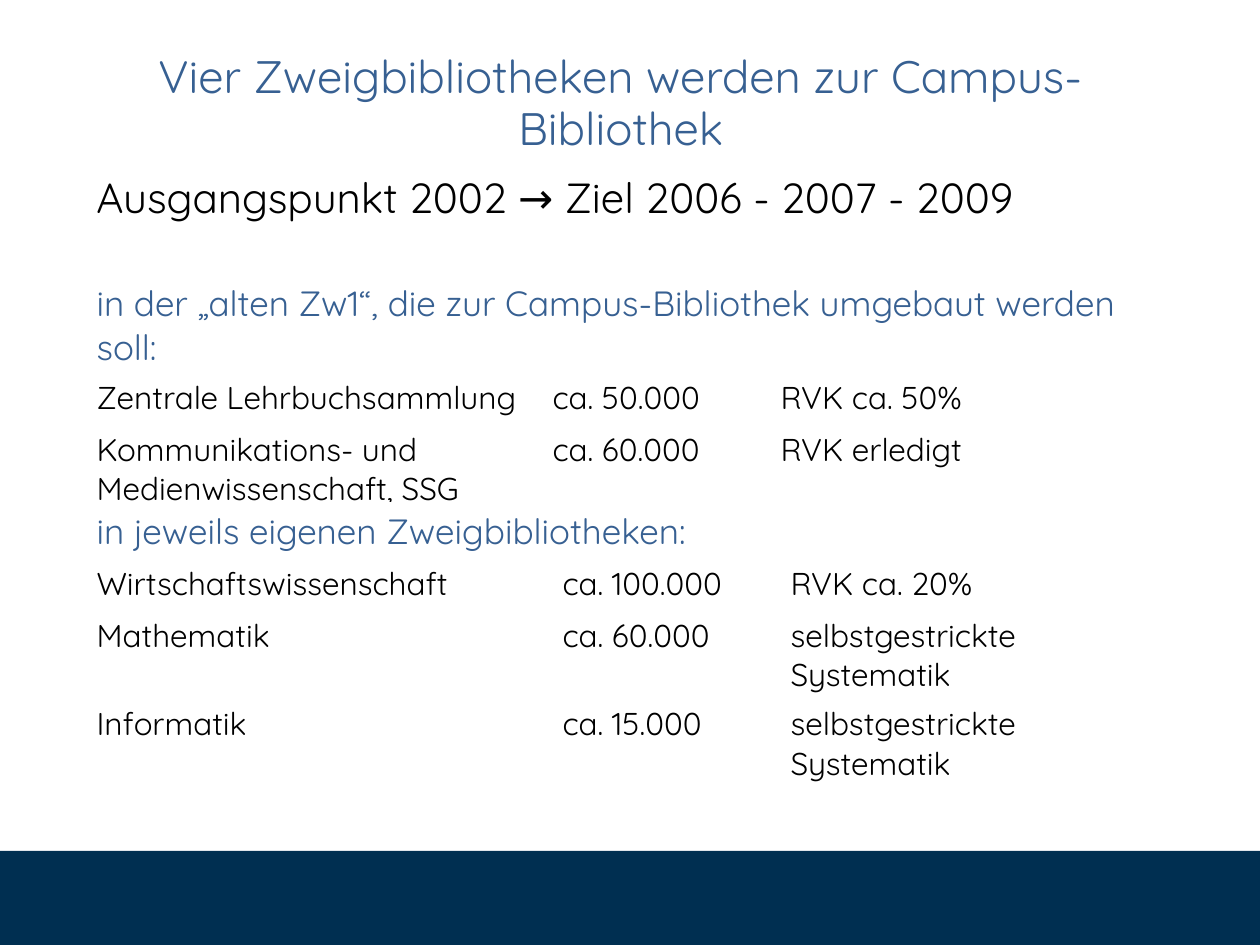
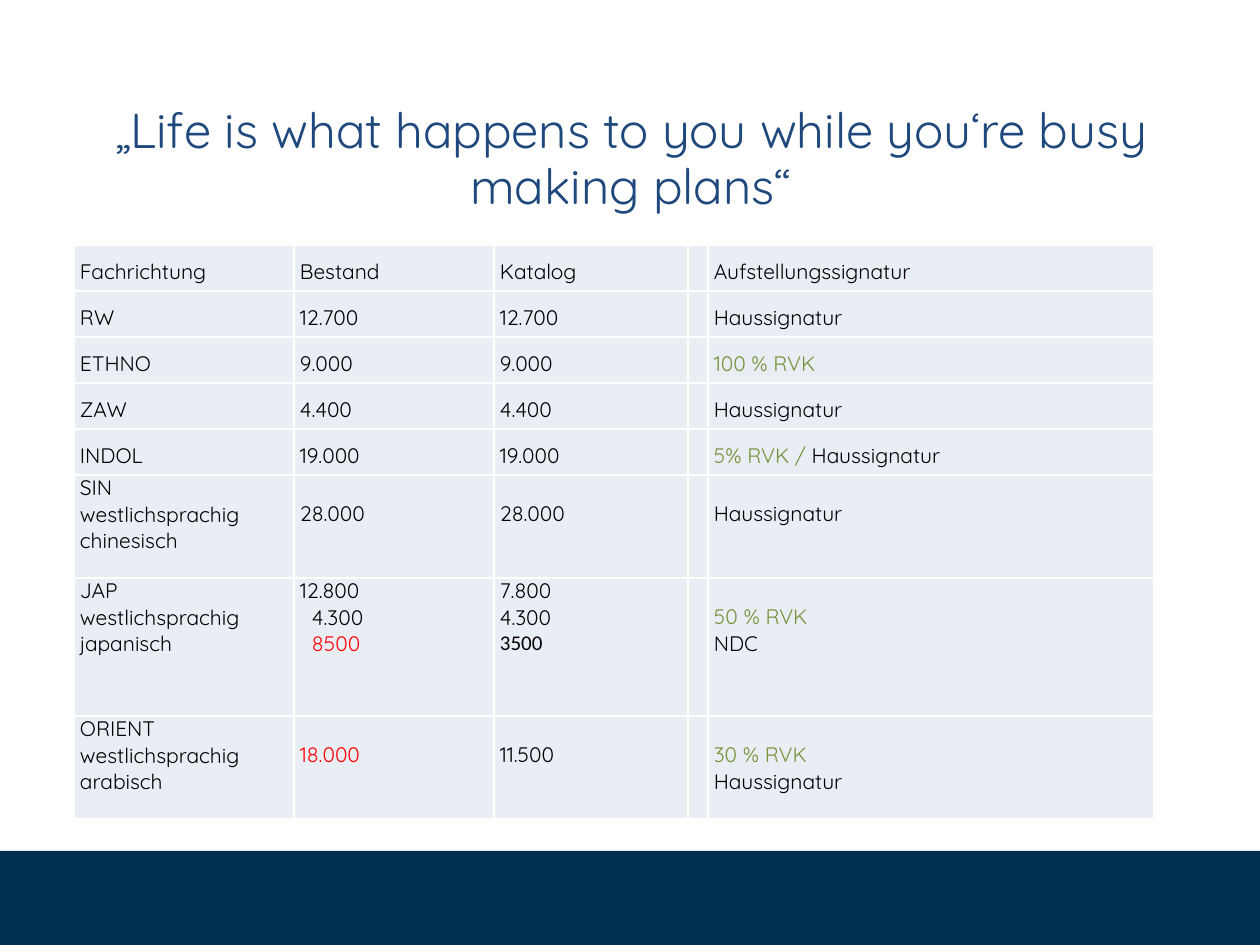
"""Builds two slides on library branches merging into a campus library."""
from dataclasses import dataclass

from lxml.etree import SubElement
from pptx import Presentation
from pptx.dml.color import RGBColor as RGB
from pptx.enum.shapes import MSO_SHAPE as SHAPE
from pptx.enum.text import MSO_ANCHOR as ANCHOR, PP_ALIGN as ALIGN
from pptx.oxml.ns import qn
from pptx.util import Pt

PX = 914400 // 126


@dataclass(frozen=True)
class Theme:
    font: str = "Quicksand"
    digits: str = "Calibri"
    band: str = "002F51"
    heading: str = "376092"
    quote: str = "1F497D"
    text: str = "000000"
    done: str = "77933C"
    gap: str = "FF0000"
    cell: str = "E9EDF4"
    line: str = "FFFFFF"
    title_size: int = 26
    quote_size: int = 28
    lead_size: int = 24
    section_size: int = 20
    row_size: int = 18
    cell_size: int = 12


T = Theme()


def write(tf, paragraphs, size, color=T.text, align=ALIGN.LEFT, spacing=None):
    """Fill a text frame; a paragraph is a string or a list of (text, colour, font)."""
    tf.word_wrap = True
    for i, runs in enumerate(paragraphs):
        p = tf.paragraphs[0] if i == 0 else tf.add_paragraph()
        p.alignment = align
        if spacing:
            p.line_spacing = spacing
        for text, run_color, font in [(runs, color, T.font)] if isinstance(runs, str) else runs:
            r = p.add_run()
            r.text = text
            r.font.size = Pt(size)
            r.font.name = font
            r.font.color.rgb = RGB.from_string(run_color)


def add_grid(s, left, top, cols, rows):
    """Add a plain table with the given column widths and row heights."""
    frame = s.shapes.add_table(len(rows), len(cols), left * PX, top * PX, sum(cols) * PX, sum(rows) * PX)
    table = frame.table
    table.first_row = table.horz_banding = False
    for col, width in zip(table.columns, cols):
        col.width = width * PX
    for row, height in zip(table.rows, rows):
        row.height = height * PX
    return table


prs = Presentation()
prs.slide_width, prs.slide_height = 1260 * PX, 945 * PX

titles = [
    ("Vier Zweigbibliotheken werden zur Campus-Bibliothek", (54, 45, 1134, 118), T.title_size, T.heading),
    ("„Life is what happens to you while you‘re busy making plans“", (64, 76, 1134, 167), T.quote_size, T.quote),
]
for title, box, size, color in titles:
    s = prs.slides.add_slide(prs.slide_layouts[6])
    sp = s.shapes.add_shape(SHAPE.RECTANGLE, 0, 851 * PX, 1260 * PX, 94 * PX)
    sp.shadow.inherit = False
    sp.fill.solid()
    sp.fill.fore_color.rgb = RGB.from_string(T.band)
    sp.line.fill.background()
    tf = s.shapes.add_textbox(*(v * PX for v in box)).text_frame
    tf.vertical_anchor = ANCHOR.MIDDLE
    write(tf, [title], size, color, ALIGN.CENTER, 0.95)

branches, holdings = prs.slides

tf = branches.shapes.add_textbox(84 * PX, 165 * PX, 1150 * PX, 69 * PX).text_frame
write(tf, ["Ausgangspunkt 2002 → Ziel 2006 - 2007 - 2009"], T.lead_size)

sections = [
    (275, (456, 228, 427), "in der „alten Zw1“, die zur Campus-Bibliothek umgebaut werden soll:", [
        ("Zentrale Lehrbuchsammlung", "ca. 50.000", "RVK ca. 50%"),
        ("Kommunikations- und Medienwissenschaft, SSG", "ca. 60.000", "RVK erledigt"),
    ]),
    (503, (466, 228, 417), "in jeweils eigenen Zweigbibliotheken:", [
        ("Wirtschaftswissenschaft", "ca. 100.000", "RVK ca. 20%"),
        ("Mathematik", "ca. 60.000", "selbstgestrickte Systematik"),
        ("Informatik", "ca. 15.000", "selbstgestrickte Systematik"),
    ]),
]
for top, cols, heading, entries in sections:
    table = add_grid(branches, 84, top, cols, [52] * (len(entries) + 1))
    for cell in table.iter_cells():
        cell.fill.background()
    table.cell(0, 0).merge(table.cell(0, 2))
    write(table.cell(0, 0).text_frame, [heading], T.section_size, T.heading)
    for i, entry in enumerate(entries, 1):
        for j, text in enumerate(entry):
            write(table.cell(i, j).text_frame, [text], T.row_size)

house = "Haussignatur"
west = "westlichsprachig"
simple_rows = [
    ("Fachrichtung", "Bestand", "Katalog", "Aufstellungssignatur"),
    ("RW", "12.700", "12.700", house),
    ("ETHNO", "9.000", "9.000", [("100 % RVK", T.done, T.font)]),
    ("ZAW", "4.400", "4.400", house),
    ("INDOL", "19.000", "19.000", [("5% RVK / ", T.done, T.font), (house, T.text, T.font)]),
]
language_rows = [
    (["SIN", west, "chinesisch"], ["28.000"], ["28.000"], [house]),
    (["JAP", west, "japanisch"],
     ["12.800", "4.300", [("8500", T.gap, T.font)]],
     ["7.800", "4.300", [("3500", T.text, T.digits)]],
     [[("50 % RVK", T.done, T.font)], "NDC"]),
    (["ORIENT", west, "arabisch"], [[("18.000", T.gap, T.font)]], ["11.500"],
     [[("30 % RVK", T.done, T.font)], house]),
]
table = add_grid(holdings, 74, 245, (220, 200, 194, 20, 446), [46] * 5 + [103, 138, 103])
for cell in table.iter_cells():
    cell.margin_left = cell.margin_right = 6 * PX
    cell.margin_top = cell.margin_bottom = 0
    tc_pr = cell._tc.get_or_add_tcPr()
    for side in ("a:lnL", "a:lnR", "a:lnT", "a:lnB"):
        ln = SubElement(tc_pr, qn(side), w=str(Pt(1)))
        SubElement(SubElement(ln, qn("a:solidFill")), qn("a:srgbClr"), val=T.line)
    cell.fill.solid()
    cell.fill.fore_color.rgb = RGB.from_string(T.cell)

text_cols = (0, 1, 2, 4)
for i, row in enumerate(simple_rows):
    for j, text in zip(text_cols, row):
        write(table.cell(i, j).text_frame, [text], T.cell_size, align=ALIGN.JUSTIFY, spacing=1.5)
for i, row in enumerate(language_rows, len(simple_rows)):
    for j, lines in zip(text_cols, row):
        cell = table.cell(i, j)
        if len(lines) < 3:
            cell.margin_top = 26 * PX
        write(cell.text_frame, lines, T.cell_size, align=ALIGN.JUSTIFY)
for p in table.cell(6, 1).text_frame.paragraphs[1:]:
    p._p.get_or_add_pPr().set("marL", str(12 * PX))

prs.save("out.pptx")
